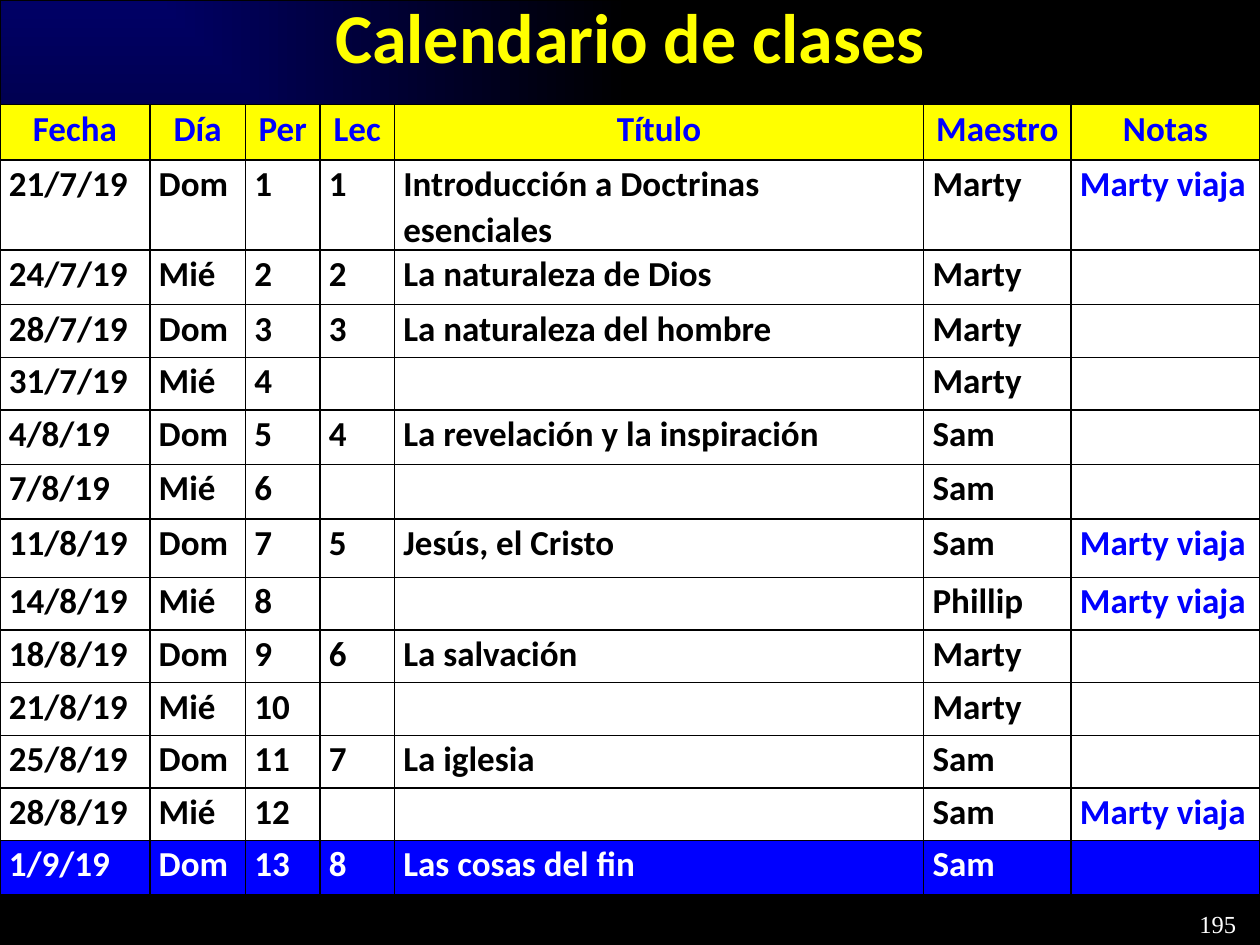
"""Build the class calendar slide."""
import pptx
import pptx.dml.color
import pptx.enum.shapes
import pptx.enum.text
import pptx.oxml
import pptx.util

Cm = pptx.util.Cm
Pt = pptx.util.Pt
ALIGN = pptx.enum.text.PP_ALIGN
ANCHOR = pptx.enum.text.MSO_ANCHOR

HEX = {"navy": "000066", "black": "000000", "yellow": "FFFF00",
       "blue": "0000FF", "white": "FFFFFF"}
NS = 'xmlns:a="http://schemas.openxmlformats.org/drawingml/2006/main"'

TITLE = "Calendario de clases"
NUMBER = "195"
TRIP = "Marty viaja"
HEAD = ("Fecha", "Día", "Per", "Lec", "Título", "Maestro", "Notas")
ROWS = [
    ("21/7/19", "Dom", "1", "1", "Introducción a Doctrinas esenciales", "Marty", TRIP),
    ("24/7/19", "Mié", "2", "2", "La naturaleza de Dios", "Marty", ""),
    ("28/7/19", "Dom", "3", "3", "La naturaleza del hombre", "Marty", ""),
    ("31/7/19", "Mié", "4", "", "", "Marty", ""),
    ("4/8/19", "Dom", "5", "4", "La revelación y la inspiración", "Sam", ""),
    ("7/8/19", "Mié", "6", "", "", "Sam", ""),
    ("11/8/19", "Dom", "7", "5", "Jesús, el Cristo", "Sam", TRIP),
    ("14/8/19", "Mié", "8", "", "", "Phillip", TRIP),
    ("18/8/19", "Dom", "9", "6", "La salvación", "Marty", ""),
    ("21/8/19", "Mié", "10", "", "", "Marty", ""),
    ("25/8/19", "Dom", "11", "7", "La iglesia", "Sam", ""),
    ("28/8/19", "Mié", "12", "", "", "Sam", TRIP),
    ("1/9/19", "Dom", "13", "8", "Las cosas del fin", "Sam", ""),
]
WIDTHS = (3.02, 1.93, 1.5, 1.5, 10.67, 2.97, 3.81)
HEIGHTS = (1.12, 1.8, 1.1, 1.06, 1.06, 1.1, 1.1, 1.18, 1.06, 1.06, 1.06, 1.06, 1.06, 1.1)


def tint(name):
    return pptx.dml.color.RGBColor.from_string(HEX[name])


def style(par, font, size, color, bold):
    for run in par.runs:
        run.font.name = font
        run.font.size = Pt(size)
        run.font.bold = bold
        run.font.color.rgb = tint(color)


def add_ground(slide, wide, high):
    ground = slide.shapes.add_shape(
        pptx.enum.shapes.MSO_SHAPE.RECTANGLE, 0, 0, wide, high)
    ground.shadow.inherit = False
    ground.line.color.rgb = tint("black")
    ground.line.width = Pt(0.75)
    ground.fill.background()
    blank = ground.fill._xPr.find(pptx.oxml.ns.qn("a:noFill"))
    stops = "".join(
        f'<a:gs pos="{pos}"><a:srgbClr val="{HEX[name]}"/></a:gs>'
        for pos, name in ((0, "navy"), (100000, "black")))
    grad = pptx.oxml.parse_xml(
        f'<a:gradFill {NS} rotWithShape="1"><a:gsLst>{stops}</a:gsLst>'
        '<a:path path="rect"><a:fillToRect r="100000" b="100000"/></a:path></a:gradFill>')
    blank.getparent().replace(blank, grad)


def add_label(slide, text, box, font, size, color, bold, align, anchor):
    label = slide.shapes.add_textbox(*map(Cm, box))
    frame = label.text_frame
    frame.word_wrap = True
    frame.vertical_anchor = anchor
    frame.text = text
    frame.paragraphs[0].alignment = align
    style(frame.paragraphs[0], font, size, color, bold)


def fill_cell(cell, text, back, color, align):
    cell.margin_left = cell.margin_right = Cm(0.18)
    cell.margin_top = cell.margin_bottom = 0
    props = cell._tc.get_or_add_tcPr()
    for side in "LRTB":
        props.append(pptx.oxml.parse_xml(
            f'<a:ln{side} {NS} w="12700"><a:solidFill>'
            f'<a:srgbClr val="{HEX["black"]}"/></a:solidFill></a:ln{side}>'))
    cell.fill.solid()
    cell.fill.fore_color.rgb = tint(back)
    if text:
        cell.text_frame.text = text
        par = cell.text_frame.paragraphs[0]
        par.alignment = align
        par.line_spacing = 1.07
        style(par, "Calibri", 20, color, True)


def add_grid(slide):
    lines = [HEAD] + ROWS
    grid = slide.shapes.add_table(
        len(lines), len(HEAD), 0, Cm(2.11), Cm(sum(WIDTHS)), Cm(sum(HEIGHTS))).table
    for col, width in zip(grid.columns, WIDTHS):
        col.width = Cm(width)
    for row, height in zip(grid.rows, HEIGHTS):
        row.height = Cm(height)
    for r, line in enumerate(lines):
        for c, text in enumerate(line):
            back, color, align = "white", "black", ALIGN.LEFT
            if r == 0:
                back, color, align = "yellow", "blue", ALIGN.CENTER
            elif r == len(ROWS):
                back, color = "blue", "white"
            elif text == TRIP:
                color = "blue"
            fill_cell(grid.cell(r, c), text, back, color, align)


def main():
    deck = pptx.Presentation()
    deck.slide_width, deck.slide_height = Cm(25.4), Cm(19.05)
    slide = deck.slides.add_slide(deck.slide_layouts[6])
    add_ground(slide, deck.slide_width, deck.slide_height)
    add_label(slide, TITLE, (0, -0.03, 25.4, 1.5), "Calibri", 40, "yellow",
              True, ALIGN.CENTER, ANCHOR.MIDDLE)
    add_label(slide, NUMBER, (23.93, 18.21, 1.47, 0.84), "Times New Roman", 14,
              "white", False, ALIGN.LEFT, ANCHOR.TOP)
    add_grid(slide)
    deck.save("out.pptx")


if __name__ == "__main__":
    main()
